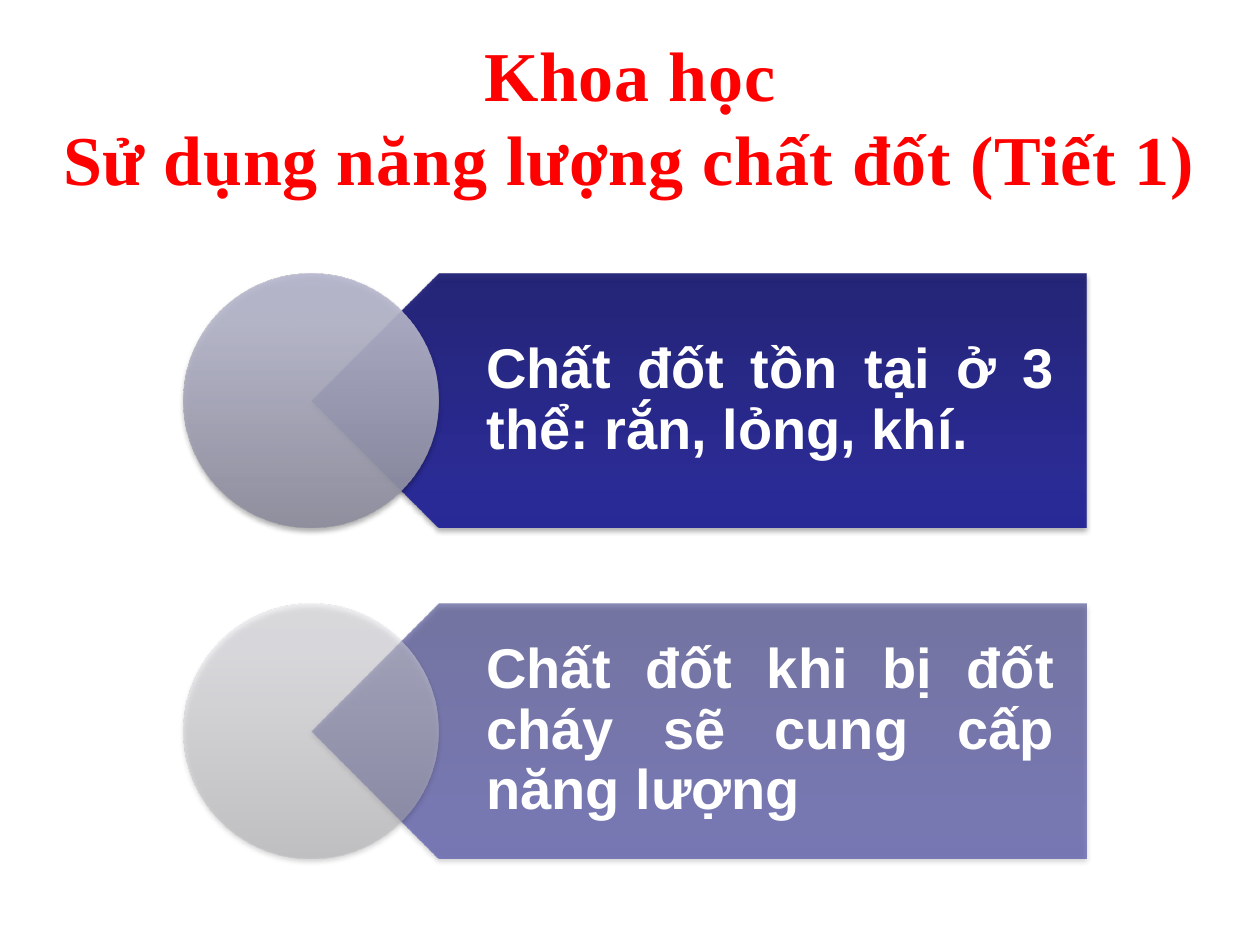
from lxml import etree
from pptx import Presentation
from pptx.dml.color import RGBColor
from pptx.enum.shapes import MSO_SHAPE
from pptx.enum.text import MSO_ANCHOR, MSO_AUTO_SIZE, PP_ALIGN
from pptx.oxml import parse_xml
from pptx.util import Inches, Pt

RECTANGLE, PENTAGON, OVAL = MSO_SHAPE.RECTANGLE, MSO_SHAPE.PENTAGON, MSO_SHAPE.OVAL
CENTER, JUSTIFY = PP_ALIGN.CENTER, PP_ALIGN.JUSTIFY
MIDDLE, TOP = MSO_ANCHOR.MIDDLE, MSO_ANCHOR.TOP
GROW = MSO_AUTO_SIZE.SHAPE_TO_FIT_TEXT

WHITE = RGBColor(0xFF, 0xFF, 0xFF)
RED = RGBColor(0xFF, 0x00, 0x00)
BLACK = RGBColor(0x00, 0x00, 0x00)
# Gradient colours from bottom to top
NAVY = (RGBColor(0x17, 0x17, 0x71), RGBColor(0x1E, 0x1E, 0x93), RGBColor(0x1C, 0x1C, 0x96))
LAVENDER = (RGBColor(0x8C, 0x8C, 0x9D), RGBColor(0xB6, 0xB6, 0xCB), RGBColor(0xB6, 0xB6, 0xCD))
GREY = (RGBColor(0xAD, 0xAD, 0xB2), RGBColor(0xE0, 0xE0, 0xE7), RGBColor(0xE1, 0xE1, 0xE8))
GRADIENT_STOPS = (0, 80, 100)

NAMESPACE = "http://schemas.openxmlformats.org/drawingml/2006/main"
TITLE_LINES = ("Khoa học", "Sử dụng năng lượng chất đốt (Tiết 1)")
# Text, circle colours, opacity in percent
ROWS = (
    ("Chất đốt tồn tại ở 3 thể: rắn, lỏng, khí.", LAVENDER, 90),
    ("Chất đốt khi bị đốt cháy sẽ cung cấp năng lượng", GREY, 50),
)


def format_run(run, font_name, size, color):
    run.font.name = font_name
    run.font.size = Pt(size)
    run.font.bold = True
    run.font.color.rgb = color


def style_shape(shape, colors, opacity):
    """Give a shape a translucent vertical gradient and a soft shadow below."""
    shape.line.fill.background()
    stops = "".join(
        f'<a:gs pos="{position * 1000}"><a:srgbClr val="{color}">'
        f'<a:alpha val="{opacity * 1000}"/></a:srgbClr></a:gs>'
        for position, color in zip(GRADIENT_STOPS, colors)
    )
    gradient = parse_xml(
        f'<a:gradFill xmlns:a="{NAMESPACE}" rotWithShape="1"><a:gsLst>{stops}</a:gsLst>'
        '<a:lin ang="16200000" scaled="0"/></a:gradFill>'
    )
    shadow = parse_xml(
        f'<a:effectLst xmlns:a="{NAMESPACE}"><a:outerShdw blurRad="{Pt(3.1)}" '
        f'dist="{Pt(1.8)}" dir="5400000" rotWithShape="0"><a:srgbClr val="{BLACK}">'
        '<a:alpha val="35000"/></a:srgbClr></a:outerShdw></a:effectLst>'
    )
    line = shape.line._get_or_add_ln()
    line.addprevious(gradient)
    line.addnext(shadow)


def add_title(slide, left, top, width, height):
    title = slide.shapes.add_shape(RECTANGLE, left, top, width, height)
    title.shadow.inherit = False
    title.fill.solid()
    title.fill.fore_color.rgb = WHITE
    title.line.fill.background()
    text_frame = title.text_frame
    text_frame.word_wrap = True
    text_frame.auto_size = GROW
    text_frame.vertical_anchor = TOP
    text_frame.text = "\n".join(TITLE_LINES)
    for paragraph in text_frame.paragraphs:
        paragraph.alignment = CENTER
        run = paragraph.runs[0]
        format_run(run, "Times New Roman", 40, RED)
        run.font._element.set("spc", "50")


def add_row(slide, left, top, width, height, text, circle_colors, opacity):
    """Place a left-pointing banner whose tip lies at the centre of a circle."""
    radius = height // 2

    # Banner
    banner = slide.shapes.add_shape(PENTAGON, left + radius, top, width - radius, height)
    banner.rotation = 180
    style_shape(banner, NAVY, opacity)

    # Text over the banner
    text_left = radius + Inches(0.5)
    label = slide.shapes.add_textbox(left + text_left, top, width - text_left, height)
    text_frame = label.text_frame
    text_frame.word_wrap = True
    text_frame.vertical_anchor = MIDDLE
    text_frame.margin_left, text_frame.margin_right = Inches(0.89), Inches(0.25)
    text_frame.margin_top = text_frame.margin_bottom = Inches(0.13)
    text_frame.text = text
    paragraph = text_frame.paragraphs[0]
    paragraph.alignment = JUSTIFY
    paragraph.line_spacing = 0.9
    # Space after as a share of the text size
    spacing = paragraph._p.get_or_add_pPr().get_or_add_spcAft()
    etree.SubElement(spacing, f"{{{NAMESPACE}}}spcPct", val="35000")
    format_run(paragraph.runs[0], "Arial", 32, WHITE)

    # Circle
    circle = slide.shapes.add_shape(OVAL, left, top, height, height)
    style_shape(circle, circle_colors, opacity)


def add_rows(slide, left, top, width, row_height, pitch):
    for index, row in enumerate(ROWS):
        add_row(slide, left, top + index * pitch, width, row_height, *row)


def main():
    presentation = Presentation()
    presentation.slide_width, presentation.slide_height = Inches(10), Inches(7.5)
    slide = presentation.slides.add_slide(presentation.slide_layouts[6])
    add_title(slide, 0, Inches(0.2), Inches(10), Inches(1.45))
    add_rows(slide, Inches(1.46), Inches(2.17), Inches(7.16), Inches(2.02), Inches(2.62))
    presentation.save("out.pptx")


if __name__ == "__main__":
    main()
